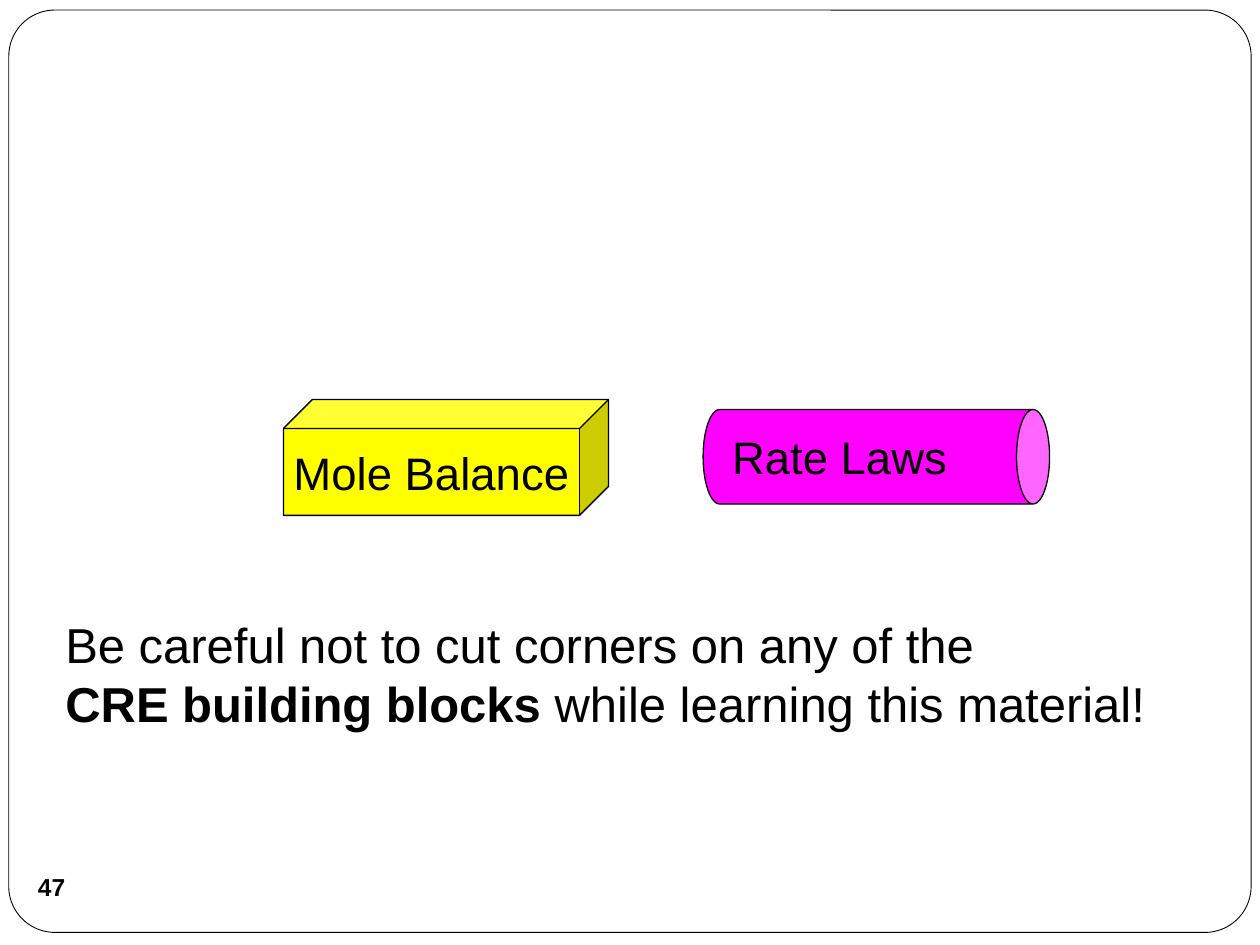
from dataclasses import dataclass

from pptx import Presentation
from pptx.dml.color import RGBColor
from pptx.enum.shapes import MSO_SHAPE
from pptx.enum.text import MSO_ANCHOR, PP_ALIGN
from pptx.util import Emu, Pt

FRAME, CUBE, CAN, OVAL = (
    MSO_SHAPE.ROUNDED_RECTANGLE, MSO_SHAPE.CUBE, MSO_SHAPE.CAN, MSO_SHAPE.OVAL)
LEFT, CENTER = PP_ALIGN.LEFT, PP_ALIGN.CENTER
TOP, MIDDLE = MSO_ANCHOR.TOP, MSO_ANCHOR.MIDDLE
EMU_PER_PX = 9144


@dataclass(frozen=True)
class Theme:
    font: str = "Arial"
    ink: str = "000000"
    paper: str = "FFFFFF"
    balance: str = "FFFF00"
    rate: str = "FF00FF"
    block_size: int = 26
    body_size: int = 28
    number_size: int = 14
    frame_line: float = 0.5
    block_line: float = 0.75


THEME = Theme()


def px(n):
    return Emu(n * EMU_PER_PX)


def rgb(value):
    return RGBColor.from_string(value)


def add_preset(s, kind, box, fill=None, line=None, adj=None):
    sp = s.shapes.add_shape(kind, *map(px, box))
    sp.shadow.inherit = False
    if adj is not None:
        sp.adjustments[0] = adj
    if fill:
        sp.fill.solid()
        sp.fill.fore_color.rgb = rgb(fill)
    else:
        sp.fill.background()
    if line:
        sp.line.color.rgb = rgb(THEME.ink)
        sp.line.width = Pt(line)
    else:
        sp.line.fill.background()
    return sp


def write(sp, paragraphs, size, align=CENTER, anchor=MIDDLE, wrap=False):
    tf = sp.text_frame
    tf.word_wrap = wrap
    tf.vertical_anchor = anchor
    for i, runs in enumerate(paragraphs):
        p = tf.add_paragraph() if i else tf.paragraphs[0]
        p.alignment = align
        for text, bold in runs:
            r = p.add_run()
            r.text = text
            r.font.name = THEME.font
            r.font.size = Pt(size)
            r.font.bold = bold
            r.font.color.rgb = rgb(THEME.ink)
    return tf


def add_mole_balance(s):
    sp = add_preset(s, CUBE, (225, 317, 258, 92), THEME.balance, THEME.block_line, 0.25)
    write(sp, [[("Mole Balance", False)]], THEME.block_size)


def add_rate_laws(s):
    sp = add_preset(s, CAN, (658, 225, 75, 275), THEME.rate, THEME.block_line, 0.35)
    sp.rotation = 90
    tf = write(sp, [[("Rate Laws", False)]], THEME.block_size, LEFT, wrap=True)
    tf._txBody.bodyPr.set("vert", "vert270")


def add_advice(s):
    sp = s.shapes.add_textbox(*map(px, (42, 483, 958, 151)))
    write(sp, [
        [("Be careful not to cut corners on any of the", False)],
        [("CRE building blocks ", True), ("while learning this material!", False)],
    ], THEME.body_size, LEFT, TOP, True)


def add_slide_number(s):
    sp = add_preset(s, OVAL, (16, 679, 50, 50))
    tf = write(sp, [[("47", True)]], THEME.number_size)
    tf.margin_left = tf.margin_right = tf.margin_top = tf.margin_bottom = 0


def main():
    prs = Presentation()
    prs.slide_width, prs.slide_height = px(1000), px(750)
    s = prs.slides.add_slide(prs.slide_layouts[6])
    add_preset(s, FRAME, (7, 8, 986, 732), THEME.paper, THEME.frame_line, 0.05)
    add_mole_balance(s)
    add_slide_number(s)
    add_advice(s)
    add_rate_laws(s)
    prs.save("out.pptx")


if __name__ == "__main__":
    main()
